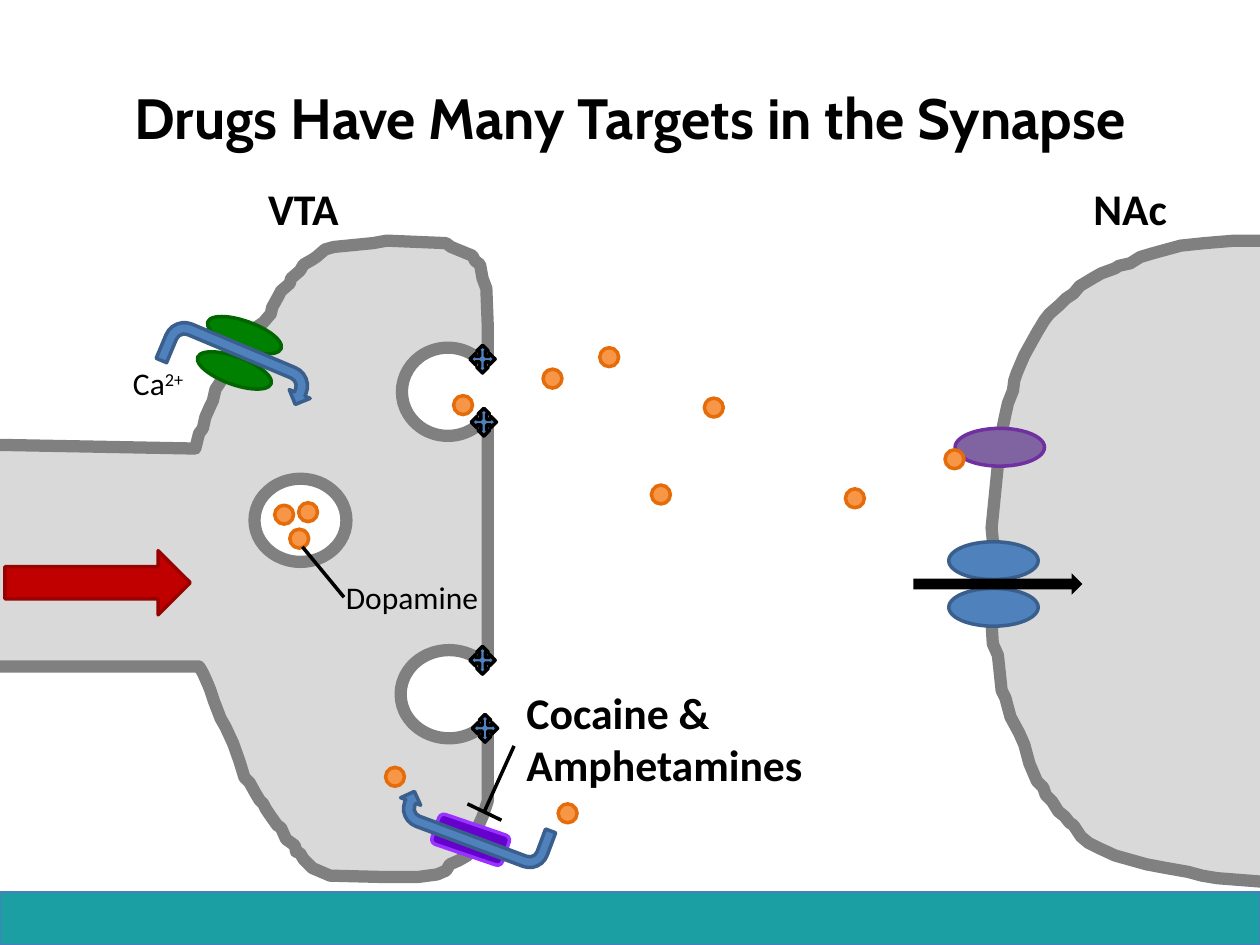
import pptx
import pptx.util
import pptx.dml.color
import pptx.enum.shapes
import pptx.enum.text
import pptx.oxml.ns
from lxml import etree

RGBColor = pptx.dml.color.RGBColor
SHAPE = pptx.enum.shapes.MSO_SHAPE
ALIGN = pptx.enum.text.PP_ALIGN
ANCHOR = pptx.enum.text.MSO_ANCHOR

BLACK = RGBColor(0x00, 0x00, 0x00)
WHITE = RGBColor(0xFF, 0xFF, 0xFF)
TEAL = RGBColor(0x1C, 0x9F, 0xA3)
BAND_EDGE = RGBColor(0x4B, 0x7E, 0xBC)
CELL = RGBColor(0xD9, 0xD9, 0xD9)
MEMBRANE = RGBColor(0x80, 0x80, 0x80)
GREEN = RGBColor(0x00, 0x80, 0x00)
GREEN_EDGE = RGBColor(0x00, 0x66, 0x00)
ORANGE = RGBColor(0xF7, 0x96, 0x46)
ORANGE_EDGE = RGBColor(0xE4, 0x6C, 0x0A)
RED = RGBColor(0xC0, 0x00, 0x00)
RED_EDGE = RGBColor(0x99, 0x00, 0x00)
BLUE = RGBColor(0x4F, 0x81, 0xBD)
BLUE_EDGE = RGBColor(0x3A, 0x5F, 0x8C)
VIOLET = RGBColor(0x66, 0x00, 0xCC)
VIOLET_EDGE = RGBColor(0x99, 0x33, 0xFF)
PURPLE = RGBColor(0x80, 0x64, 0xA2)
PURPLE_EDGE = RGBColor(0x70, 0x30, 0xA0)

COLUMNS, ROWS = 100, 75
UNIT = pptx.util.Inches(10) // COLUMNS
STEPS = 10

AXON_TERMINAL = [
    (-0.7, 35.3), (15.5, 35.6), (15.8, 34.4), (16.1, 34), (16.3, 33.1),
    (16.7, 32.2), (16.9, 31.8), (17.1, 30.9), (17.7, 30), (18.5, 28.8),
    (19, 28), (19.4, 27.2), (20, 26.5), (20.3, 26), (20.9, 25.6),
    (21.5, 24.9), (21.6, 24.4), (22.1, 23.5), (22.3, 23.1), (23, 22.5),
    (23.1, 22.1), (23.8, 21.5), (24.1, 21), (24.8, 20.6), (25.1, 20.4),
    (25.8, 19.8), (26.5, 19.6), (29.6, 19.3), (30.7, 19.1), (35.4, 19.3),
    (35.8, 19.6), (37.5, 20.3), (37.7, 20.7), (38.1, 21), (38.3, 22.1),
    (38.6, 22.9), (38.7, 25.6), (38.7, 63.6), (38.3, 64.8), (37.9, 65.7),
    (37.7, 66.1), (37.3, 67), (37.1, 67.9), (36.4, 68.3), (35.7, 68.6),
    (35.4, 69.1), (34.7, 69.4), (33.2, 69.6), (30.2, 69.6), (26.2, 69.5),
    (25.5, 69.2), (24.8, 68.9), (24.1, 68.2), (23.8, 67.7), (23.5, 67.6),
    (23.4, 67.1), (22.7, 66.6), (22.3, 65.7), (22, 65.5), (21.5, 64.8),
    (21.1, 64.2), (20.9, 63.8), (20.6, 63.5), (20.3, 63), (19.8, 62.1),
    (19.4, 61.7), (19, 60.4), (18.5, 59), (17.9, 57.7), (17.5, 57),
    (17, 55.7), (16.7, 54.8), (16.5, 54.3), (16.1, 53.4), (15.8, 52.9),
    (-0.8, 52.9),
]
RECEIVING_CELL = [
    (100.5, 70), (96.6, 69.7), (95.4, 69.5), (94.3, 69.2), (92.6, 68.9),
    (91, 68.6), (88.5, 67.9), (87.2, 67.3), (86.4, 66.9), (85.8, 66.4),
    (85.2, 65.5), (84.9, 65.3), (84.5, 64.8), (84, 64.4), (83.5, 63.6),
    (83, 63.1), (82.8, 62.5), (82.3, 62), (81.7, 60.6), (81.3, 59.1),
    (80.9, 58.2), (80.2, 56.9), (79.8, 55.4), (79.5, 54.8), (79.2, 52),
    (78.8, 51.1), (78.7, 49.5), (78.4, 46), (78.6, 44.1), (78.8, 42.9),
    (78.7, 41.9), (78.9, 39.9), (79.2, 36.9), (79.4, 34.8), (79.8, 32.9),
    (80, 32), (80.4, 31), (80.5, 30.2), (80.7, 29.6), (81.3, 28.2),
    (81.8, 27.3), (82.3, 26.4), (82.9, 25.4), (83.3, 24.9), (84.1, 24.2),
    (84.6, 23.7), (85.2, 23.3), (85.7, 22.7), (86.7, 22.1), (87.4, 21.7),
    (88.5, 21.3), (88.8, 21.1), (89.7, 20.9), (90.5, 20.4), (91.5, 20.1),
    (93.7, 19.5), (95.6, 19.3), (98, 19.1), (100.8, 19.1),
]
VESICLE_DOPAMINE = [(21.8, 40.1), (23.7, 39.9), (23, 42)]
REUPTAKE_DOPAMINE = [(30.6, 60.9), (44.3, 63.8)]
CLEFT_DOPAMINE = [(36, 31.4), (47.6, 27.6), (55.9, 31.6), (51.7, 38.5),
                  (43.1, 29.3), (67.1, 38.8)]
BOUND_DOPAMINE = [(75, 35.7)]
OPENINGS = [
    ((31.9, 27.6, 7.3, 7), (36.8, 28.5, 4.1, 4.9), [(37.3, 27.4), (37.4, 32.4)]),
    ((31.8, 51.6, 7.7, 7), (37.1, 52.5, 4.1, 4.9), [(37.3, 51.3), (37.5, 56.7)]),
]


def grid(*cells):
    return [pptx.util.Emu(round(cell * UNIT)) for cell in cells]


def paint(shape, fill, edge=None, width=2):
    shape.shadow.inherit = False
    shape.fill.solid()
    shape.fill.fore_color.rgb = fill
    if edge is None:
        shape.line.fill.background()
    else:
        shape.line.color.rgb = edge
        shape.line.width = pptx.util.Pt(width)


def add_figure(page, kind, place, fill, edge=None, width=2, turn=0):
    figure = page.shapes.add_shape(kind, *grid(*place))
    figure.rotation = turn
    paint(figure, fill, edge, width)


def add_cell(page, outline):
    points = [(round(x * STEPS), round(y * STEPS)) for x, y in outline]
    builder = page.shapes.build_freeform(*points[0], scale=UNIT / STEPS)
    builder.add_line_segments(points[1:], close=True)
    paint(builder.convert_to_shape(), CELL, MEMBRANE, 7)


def add_dopamine(page, spots):
    for x, y in spots:
        add_figure(page, SHAPE.OVAL, (x, y, 1.5, 1.5), ORANGE, ORANGE_EDGE)


def add_opening(page, pocket, gap, gates):
    add_figure(page, SHAPE.OVAL, pocket, WHITE, MEMBRANE, 7)
    add_figure(page, SHAPE.RECTANGLE, gap, WHITE)
    for x, y in gates:
        add_figure(page, SHAPE.QUAD_ARROW, (x, y, 2, 2.2), BLUE, BLACK)


def add_stroke(page, start, end):
    stroke = page.shapes.add_connector(
        pptx.enum.shapes.MSO_CONNECTOR.STRAIGHT, *grid(*start, *end))
    stroke.line.color.rgb = BLACK
    stroke.line.width = pptx.util.Pt(2)
    etree.SubElement(stroke.element.spPr, pptx.oxml.ns.qn("a:effectLst"))


def add_label(page, place, words, size, font="Calibri", bold=True,
              align=ALIGN.LEFT, anchor=ANCHOR.TOP, wrap=True, raised=""):
    box = page.shapes.add_textbox(*grid(*place))
    frame = box.text_frame
    frame.text = words
    frame.word_wrap = wrap
    frame.vertical_anchor = anchor
    para = frame.paragraphs[0]
    para.alignment = align
    if raised:
        span = para.add_run()
        span.text = raised
        span.font._element.set("baseline", "30000")
    for span in para.runs:
        span.font.name = font
        span.font.size = pptx.util.Pt(size)
        span.font.bold = bold
        span.font.color.rgb = BLACK


def add_sending_side(page):
    add_cell(page, AXON_TERMINAL)
    for place in [(18.3, 23.5, 2.2, 6.2), (17.5, 26.3, 2.2, 6.2)]:
        add_figure(page, SHAPE.OVAL, place, GREEN, GREEN_EDGE, turn=110)
    add_figure(page, SHAPE.U_TURN_ARROW, (12.6, 27.4, 12.5, 3.6),
               BLUE, BLUE_EDGE, turn=22.8)
    add_figure(page, SHAPE.OVAL, (20.2, 38, 7.3, 6.6), WHITE, MEMBRANE, 7)
    add_dopamine(page, VESICLE_DOPAMINE + REUPTAKE_DOPAMINE)
    add_figure(page, SHAPE.RIGHT_ARROW, (0.4, 43.7, 14.7, 5.1), RED, RED_EDGE)
    add_figure(page, SHAPE.ROUNDED_RECTANGLE, (34.4, 65.4, 5.9, 2.5),
               VIOLET, VIOLET_EDGE, turn=18.8)
    add_figure(page, SHAPE.U_TURN_ARROW, (31.4, 63.8, 12.5, 3.4),
               BLUE, BLUE_EDGE, turn=200.5)
    for opening in OPENINGS:
        add_opening(page, *opening)
    add_dopamine(page, CLEFT_DOPAMINE)


def add_receiving_side(page):
    add_cell(page, RECEIVING_CELL)
    for top in (46.7, 43):
        add_figure(page, SHAPE.OVAL, (75.3, top, 7.1, 3), BLUE, BLUE_EDGE)
    add_figure(page, SHAPE.RIGHT_ARROW, (72.5, 45.5, 13.4, 1.7), BLACK)
    add_figure(page, SHAPE.OVAL, (75.8, 34, 7.1, 3), PURPLE, PURPLE_EDGE)
    add_dopamine(page, BOUND_DOPAMINE)


def add_labels(page):
    add_label(page, (5, 3, 90, 12.5), "Drugs Have Many Targets in the Synapse",
              32.4, font="Cabin", align=ALIGN.CENTER, anchor=ANCHOR.MIDDLE)
    add_label(page, (20.3, 13.9, 7.7, 5.2), "VTA", 25, wrap=False)
    add_label(page, (85.8, 13.9, 7.9, 5.2), "NAc", 25, wrap=False)
    add_label(page, (40.8, 53.9, 27.5, 9.4), "Cocaine & Amphetamines", 25)
    add_label(page, (9.2, 28.4, 6.7, 4), "Ca", 18, bold=False,
              align=ALIGN.CENTER, raised="2+")
    add_label(page, (25, 45.4, 15.4, 4), "Dopamine", 18, bold=False,
              align=ALIGN.CENTER)
    add_stroke(page, (27.3, 47.4), (24, 43.4))
    add_stroke(page, (40.8, 59.2), (38.4, 64.5))
    add_stroke(page, (39.8, 65.1), (37.1, 63.8))


def main():
    deck = pptx.Presentation()
    deck.slide_width, deck.slide_height = grid(COLUMNS, ROWS)
    page = deck.slides.add_slide(deck.slide_layouts[6])
    add_figure(page, SHAPE.RECTANGLE, (0, 70.8, COLUMNS, 4.2),
               TEAL, BAND_EDGE, 0.75)
    add_sending_side(page)
    add_receiving_side(page)
    add_labels(page)
    deck.save("out.pptx")


if __name__ == "__main__":
    main()
